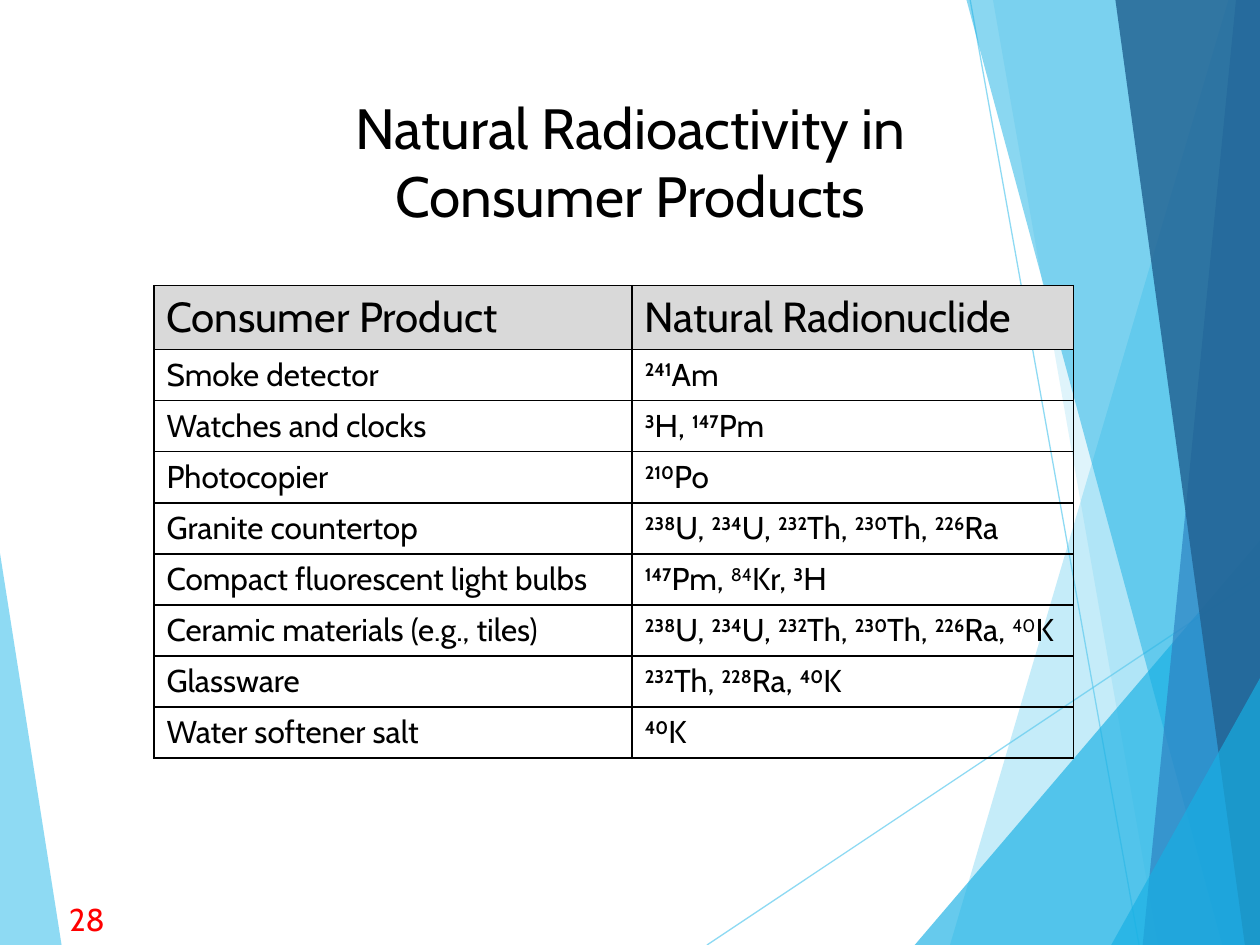
from itertools import groupby

from lxml.etree import SubElement
from pptx import Presentation
from pptx.dml.color import RGBColor
from pptx.enum.shapes import MSO_CONNECTOR
from pptx.enum.text import PP_ALIGN
from pptx.oxml import parse_xml
from pptx.oxml.ns import nsdecls, qn
from pptx.util import Pt

FONT = "Cabin"
BLACK = RGBColor(0x00, 0x00, 0x00)
RED = RGBColor(0xFF, 0x00, 0x00)
HEADER_GREY = RGBColor(0xD9, 0xD9, 0xD9)
SKY = RGBColor(0x5F, 0xCB, 0xEF)
CYAN = RGBColor(0x17, 0xB0, 0xE4)
BLUE = RGBColor(0x2E, 0x83, 0xC3)
NAVY = RGBColor(0x22, 0x62, 0x92)

WIDTH, HEIGHT = 720, 540
LIGHT_MARK = "~"

LEFT_FACET = (SKY, 70, [(0, 316), (35.2, 540), (0, 540)])
RAYS = [((404, 540), (720, 329.3)), ((554.4, 0), (650.9, 540))]
RIGHT_FACETS = [
    (SKY, 36, [(702, 0), (542.9, 540), (720, 540), (720, 0)]),
    (SKY, 20, [(567.4, 0), (661.7, 540), (720, 540), (720, 0)]),
    (CYAN, 66, [(522.7, 540), (720, 308.9), (720, 540)]),
    (CYAN, 50, [(552.3, 0), (698.4, 540), (720, 540), (720, 0)]),
    (BLUE, 70, [(706.3, 0), (653, 540), (720, 540), (720, 0)]),
    (NAVY, 82, [(637.4, 0), (711.4, 540), (720, 540), (720, 0)]),
    (CYAN, 66, [(635, 540), (720, 387.5), (720, 540)]),
]

HEADINGS = ("Consumer Product", "Natural Radionuclide")
PRODUCTS = [
    ("Smoke detector", "241Am"),
    ("Watches and clocks", "3H, 147Pm"),
    ("Photocopier", "210Po"),
    ("Granite countertop", "238U, 234U, 232Th, 230Th, 226Ra"),
    ("Compact fluorescent light bulbs", "147Pm, ~84Kr, 3H"),
    ("Ceramic materials (e.g., tiles)", "238U, 234U, 232Th, 230Th, 226Ra, ~40K"),
    ("Glassware", "232Th, 228Ra, 40K"),
    ("Water softener salt", "40K"),
]


def set_alpha(properties, percent):
    """Make the first solid colour below the properties translucent."""
    colour = next(properties.iter(qn("a:srgbClr")))
    SubElement(colour, qn("a:alpha"), val=str(percent * 1000))


def style_run(run, size, colour=BLACK, bold=False):
    """Apply the deck font to a run."""
    run.font.name = FONT
    run.font.size = Pt(size)
    run.font.color.rgb = colour
    run.font.bold = bold


def add_facet(slide, left, top, colour, alpha, corners):
    """Draw one translucent polygon."""
    points = [(Pt(left + x), Pt(top + y)) for x, y in corners]
    builder = slide.shapes.build_freeform(*points[0])
    builder.add_line_segments(points[1:])
    facet = builder.convert_to_shape()
    facet.shadow.inherit = False
    facet.fill.solid()
    facet.fill.fore_color.rgb = colour
    facet.line.fill.background()
    set_alpha(facet._element.spPr, alpha)


def add_ray(slide, left, top, start, end):
    """Draw one thin translucent line."""
    ray = slide.shapes.add_connector(
        MSO_CONNECTOR.STRAIGHT,
        Pt(left + start[0]), Pt(top + start[1]),
        Pt(left + end[0]), Pt(top + end[1]),
    )
    ray.line.color.rgb = SKY
    ray.line.width = Pt(0.75)
    set_alpha(ray._element.spPr, 70)
    SubElement(ray._element.spPr, qn("a:effectLst"))


def add_backdrop(slide, left, top):
    """Place the facets and rays that frame the slide."""
    add_facet(slide, left, top, *LEFT_FACET)
    for start, end in RAYS:
        add_ray(slide, left, top, start, end)
    for facet in RIGHT_FACETS:
        add_facet(slide, left, top, *facet)


def add_label(slide, left, top, width, height, text, size, colour, align):
    """Place a single paragraph of text in a box."""
    box = slide.shapes.add_textbox(Pt(left), Pt(top), Pt(width), Pt(height))
    box.text_frame.word_wrap = True
    paragraph = box.text_frame.paragraphs[0]
    paragraph.text = text
    paragraph.alignment = align
    for run in paragraph.runs:
        style_run(run, size, colour)


def set_borders(cell):
    """Rule all four sides of a cell in black."""
    properties = cell._tc.get_or_add_tcPr()
    for index, side in enumerate(("lnL", "lnR", "lnT", "lnB")):
        border = parse_xml(
            f'<a:{side} {nsdecls("a")} w="{Pt(1)}"><a:solidFill>'
            f'<a:srgbClr val="{BLACK}"/></a:solidFill></a:{side}>'
        )
        properties.insert(index, border)


def write_nuclides(paragraph, nuclides):
    """Write nuclides with raised mass numbers, bold unless marked light."""
    bold = True
    for is_mass, letters in groupby(nuclides, str.isdigit):
        text = "".join(letters)
        run = paragraph.add_run()
        run.text = text.replace(LIGHT_MARK, "")
        style_run(run, 18, bold=is_mass and bold)
        if is_mass:
            run.font._element.set("baseline", "30000")
        bold = not text.endswith(LIGHT_MARK)


def write_text(paragraph, text, size):
    """Write plain cell text."""
    paragraph.text = text
    style_run(paragraph.runs[0], size)


def add_product_table(slide, left, top, width, height):
    """Place the table of products and their nuclides."""
    header_height = 36.6
    row_height = (height - header_height) / len(PRODUCTS)
    frame = slide.shapes.add_table(
        len(PRODUCTS) + 1, len(HEADINGS), Pt(left), Pt(top), Pt(width), Pt(height)
    )
    table = frame.table
    table.first_row = table.horz_banding = False
    for column, share in zip(table.columns, (0.52, 0.48)):
        column.width = Pt(width * share)
    for index, row in enumerate(table.rows):
        row.height = Pt(row_height if index else header_height)
    for cell, heading in zip(table.rows[0].cells, HEADINGS):
        write_text(cell.text_frame.paragraphs[0], heading, 24)
        cell.fill.solid()
        cell.fill.fore_color.rgb = HEADER_GREY
    for index, (product, nuclides) in enumerate(PRODUCTS, start=1):
        product_cell, nuclide_cell = table.rows[index].cells
        write_text(product_cell.text_frame.paragraphs[0], product, 18)
        write_nuclides(nuclide_cell.text_frame.paragraphs[0], nuclides)
        product_cell.fill.background()
        nuclide_cell.fill.background()
    for cell in table.iter_cells():
        set_borders(cell)


def main():
    """Build the slide and save it."""
    deck = Presentation()
    deck.slide_width, deck.slide_height = Pt(WIDTH), Pt(HEIGHT)
    slide = deck.slides.add_slide(deck.slide_layouts[6])
    add_backdrop(slide, 0, 0)
    title = "Natural Radioactivity in\vConsumer Products"
    add_label(slide, 58.3, 49.7, 604, 81.4, title, 32.4, BLACK, PP_ALIGN.CENTER)
    add_product_table(slide, 88, 163.2, 525.6, 270)
    add_label(slide, 32.4, 511, 37.4, 29, "28", 18, RED, PP_ALIGN.LEFT)
    deck.save("out.pptx")


if __name__ == "__main__":
    main()
